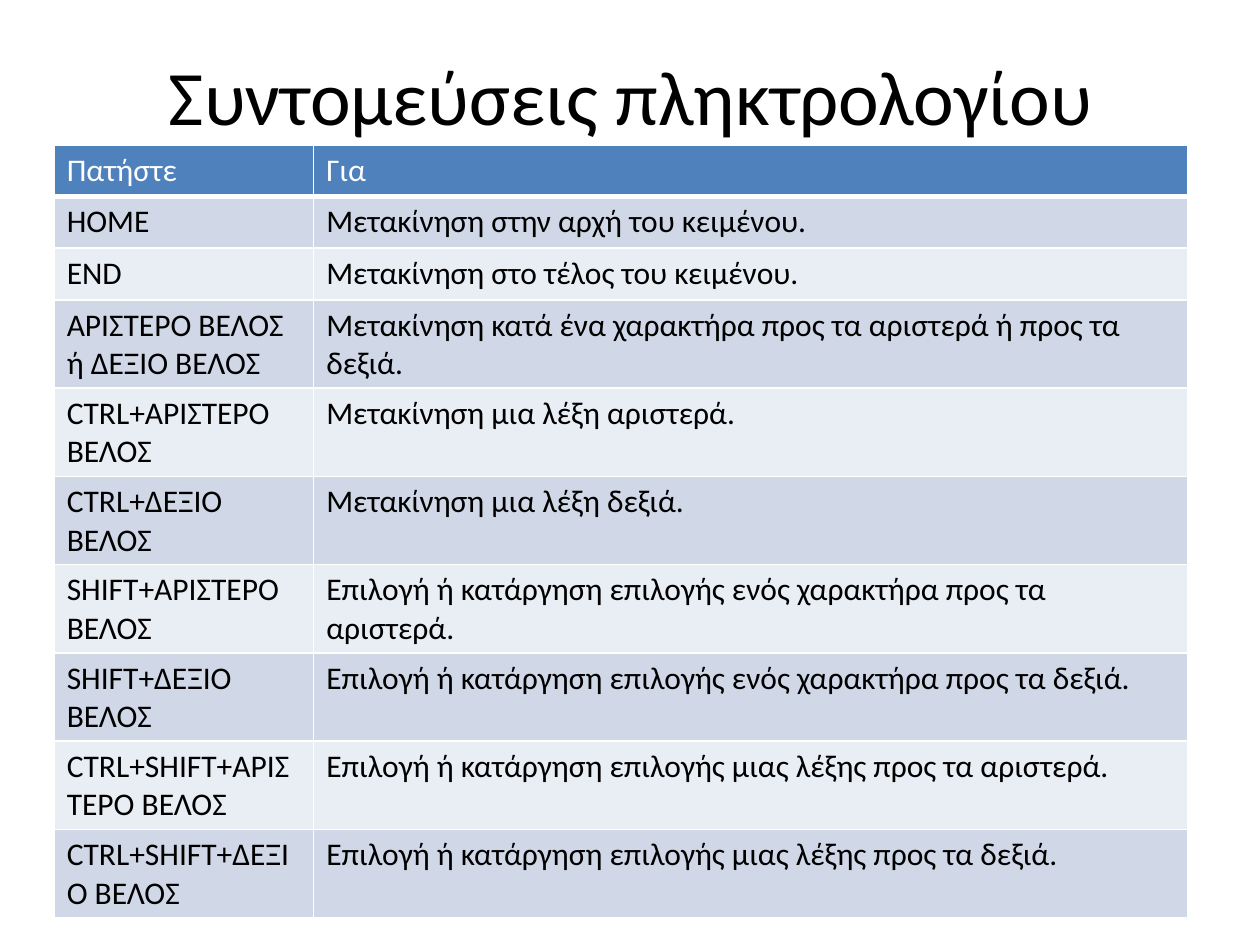
from typing import NamedTuple

from lxml import etree
from pptx import Presentation
from pptx.dml.color import RGBColor
from pptx.enum.text import MSO_ANCHOR, PP_ALIGN
from pptx.oxml.ns import qn
from pptx.util import Inches, Pt

CENTER = PP_ALIGN.CENTER
MIDDLE = MSO_ANCHOR.MIDDLE

FONT = "Calibri"
BLACK = RGBColor(0x00, 0x00, 0x00)
WHITE = RGBColor(0xFF, 0xFF, 0xFF)
HEADER_BLUE = RGBColor(0x4F, 0x81, 0xBD)
BAND_DARK = RGBColor(0xD0, 0xD8, 0xE8)
BAND_LIGHT = RGBColor(0xE9, 0xED, 0xF4)

COLUMN_WIDTHS = (2.06, 6.94)
ROW_HEIGHT = 0.41
THIN, THICK = 1, 3


class Shortcut(NamedTuple):
    keys: str
    action: str


HEADER = Shortcut("Πατήστε", "Για")
SHORTCUTS = (
    Shortcut("HOME", "Μετακίνηση στην αρχή του κειμένου."),
    Shortcut("END", "Μετακίνηση στο τέλος του κειμένου."),
    Shortcut("ΑΡΙΣΤΕΡΟ ΒΕΛΟΣ ή ΔΕΞΙΟ ΒΕΛΟΣ",
             "Μετακίνηση κατά ένα χαρακτήρα προς τα αριστερά ή προς τα δεξιά."),
    Shortcut("CTRL+ΑΡΙΣΤΕΡΟ ΒΕΛΟΣ", "Μετακίνηση μια λέξη αριστερά."),
    Shortcut("CTRL+ΔΕΞΙΟ ΒΕΛΟΣ", "Μετακίνηση μια λέξη δεξιά."),
    Shortcut("SHIFT+ΑΡΙΣΤΕΡΟ ΒΕΛΟΣ",
             "Επιλογή ή κατάργηση επιλογής ενός χαρακτήρα προς τα αριστερά."),
    Shortcut("SHIFT+ΔΕΞΙΟ ΒΕΛΟΣ",
             "Επιλογή ή κατάργηση επιλογής ενός χαρακτήρα προς τα δεξιά."),
    Shortcut("CTRL+SHIFT+ΑΡΙΣΤΕΡΟ ΒΕΛΟΣ",
             "Επιλογή ή κατάργηση επιλογής μιας λέξης προς τα αριστερά."),
    Shortcut("CTRL+SHIFT+ΔΕΞΙΟ ΒΕΛΟΣ",
             "Επιλογή ή κατάργηση επιλογής μιας λέξης προς τα δεξιά."),
)


def add_run(paragraph, text: str, size: float, color: RGBColor) -> None:
    run = paragraph.add_run()
    run.text = text
    run.font.name = FONT
    run.font.size = Pt(size)
    run.font.bold = False
    run.font.color.rgb = color


def set_borders(cell, top: float, bottom: float) -> None:
    """Draw white lines on all four sides; call before the cell is filled."""
    properties = cell._tc.get_or_add_tcPr()
    widths = {"a:lnL": THIN, "a:lnR": THIN, "a:lnT": top, "a:lnB": bottom}
    for tag, width in widths.items():
        line = etree.SubElement(properties, qn(tag), w=str(Pt(width)))
        fill = etree.SubElement(line, qn("a:solidFill"))
        etree.SubElement(fill, qn("a:srgbClr"), val=str(WHITE))


def add_title(slide, text: str) -> None:
    shape = slide.shapes.add_textbox(Inches(0.51), Inches(0.13), Inches(9), Inches(1.25))
    frame = shape.text_frame
    frame.word_wrap = True
    frame.vertical_anchor = MIDDLE
    paragraph = frame.paragraphs[0]
    paragraph.alignment = CENTER
    add_run(paragraph, text, 44, BLACK)


def add_shortcut_table(slide, rows: tuple[Shortcut, ...]) -> None:
    table = slide.shapes.add_table(
        len(rows), len(COLUMN_WIDTHS), Inches(0.43), Inches(1.15),
        Inches(sum(COLUMN_WIDTHS)), Inches(ROW_HEIGHT * len(rows))).table
    for column, width in zip(table.columns, COLUMN_WIDTHS):
        column.width = Inches(width)

    for row_index, shortcut in enumerate(rows):
        table.rows[row_index].height = Inches(ROW_HEIGHT)
        is_header = row_index == 0
        band = BAND_DARK if row_index % 2 else BAND_LIGHT
        for column_index, text in enumerate(shortcut):
            cell = table.cell(row_index, column_index)
            set_borders(cell, top=THICK if row_index == 1 else THIN,
                        bottom=THICK if is_header else THIN)
            cell.fill.solid()
            cell.fill.fore_color.rgb = HEADER_BLUE if is_header else band
            add_run(cell.text_frame.paragraphs[0], text, 18,
                    WHITE if is_header else BLACK)


def main() -> None:
    presentation = Presentation()
    presentation.slide_width = Inches(10)
    presentation.slide_height = Inches(7.5)
    slide = presentation.slides.add_slide(presentation.slide_layouts[6])

    # Title above the table of keyboard shortcuts
    add_title(slide, "Συντομεύσεις πληκτρολογίου")
    add_shortcut_table(slide, (HEADER, *SHORTCUTS))

    presentation.save("out.pptx")


if __name__ == "__main__":
    main()
